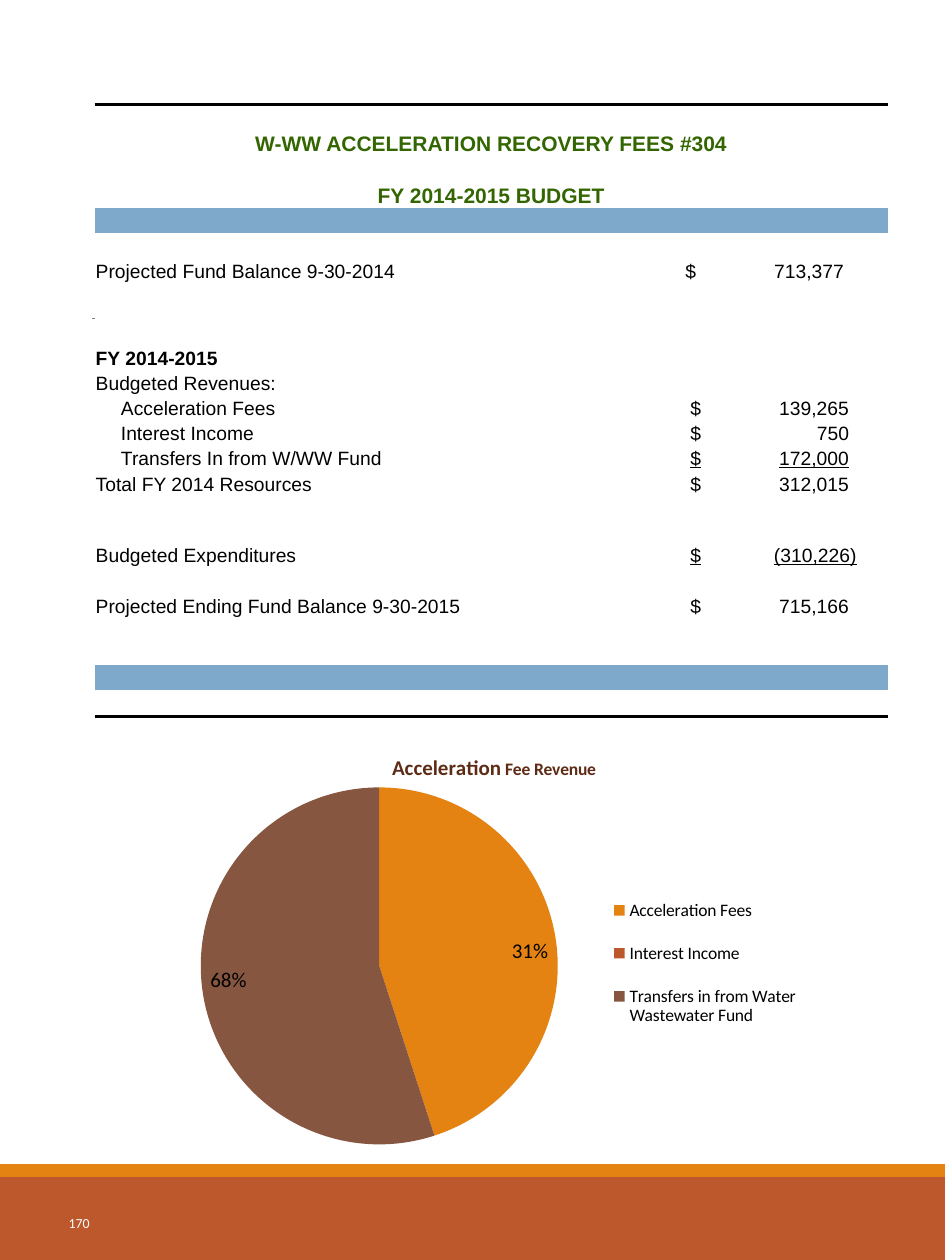
from lxml.etree import SubElement
from pptx import Presentation
from pptx.chart.data import CategoryChartData
from pptx.dml.color import RGBColor
from pptx.enum.chart import XL_CHART_TYPE, XL_LABEL_POSITION as LABEL, XL_LEGEND_POSITION
from pptx.enum.shapes import MSO_CONNECTOR, MSO_SHAPE
from pptx.enum.text import MSO_ANCHOR, PP_ALIGN
from pptx.oxml import parse_xml
from pptx.oxml.ns import nsdecls, qn
from pptx.util import Inches, Pt

COLORS = {
    "rust": "BD582C", "orange": "E48312", "brown": "865640", "chart_title": "5E2C16",
    "heading": "336600", "band": "7EA9CA", "white": "FFFFFF", "black": "000000",
    "gray": "808080",
}
COL_WIDTHS = [0.93, 0.7, 0.23, 0.93, 0.93, 0.93, 1.62]
INDENT = 0.21
AMOUNT_INDENT = 0.05

# height, label, columns spanned by the label, amount, options
ROWS = [
    (0.41, "W-WW ACCELERATION RECOVERY FEES #304", 7, "", {"heading": True}),
    (0.41, "FY 2014-2015 BUDGET", 7, "", {"heading": True}),
    (0.2, "", 1, "", {"fill": "band"}),
    (0.19, "", 1, "", {}),
    (0.2, "Projected Fund Balance 9-30-2014", 5, "713,377", {"amount_left": 0.01}),
    (0.32, "", 2, "", {}),
    (0.37, "FY 2014-2015", 2, "", {"bold": True}),
    (0.2, "Budgeted Revenues:", 3, "", {}),
    (0.2, "Acceleration Fees", 3, "139,265", {"left": INDENT}),
    (0.2, "Interest Income", 3, "750", {"left": INDENT}),
    (0.2, "Transfers In from W/WW Fund", 5, "172,000", {"left": INDENT, "underline": True}),
    (0.2, "Total FY 2014 Resources", 4, "312,015", {}),
    (0.2, "", 1, "", {}),
    (0.37, "Budgeted Expenditures", 4, "(310,226)", {"underline": True, "tab": 1.32}),
    (0.2, "", 1, "", {}),
    (0.2, "Projected Ending Fund Balance 9-30-2015", 5, "715,166", {}),
    (0.19, "", 1, "", {}),
    (0.19, "", 1, "", {}),
    (0.2, "", 1, "", {"fill": "band"}),
    (0.21, "", 1, "", {}),
]
# category, share, colour, label, label position
SLICES = [
    ("Acceleration Fees", 45, "orange", "31%", LABEL.INSIDE_END),
    ("Interest Income", 0, "rust", "1%", LABEL.OUTSIDE_END),
    ("Transfers in from Water Wastewater Fund", 55, "brown", "68%", LABEL.INSIDE_END),
]


def rgb(name):
    return RGBColor.from_string(COLORS[name])


def set_font(font, name, size, color, bold=False):
    font.name, font.size, font.bold = name, Pt(size), bold
    font.color.rgb = rgb(color)


def add_border(cell, side):
    """Rule one edge of a cell; side is lnT or lnB."""
    cell._tc.get_or_add_tcPr().insert(0, parse_xml(
        f'<a:{side} {nsdecls("a")} w="{Pt(2)}"><a:solidFill>'
        f'<a:srgbClr val="{COLORS["black"]}"/></a:solidFill></a:{side}>'))


def place(element, index, x, y, w, h, target=""):
    """Give a chart part a manual layout, in fractions of the chart."""
    for old in element.findall(qn("c:layout")):
        element.remove(old)
    sizes = "".join(f'<c:{k} val="{v}"/>' for k, v in zip("xywh", (x, y, w, h)))
    element.insert(index, parse_xml(
        f'<c:layout {nsdecls("c")}><c:manualLayout>{target}'
        f'<c:xMode val="edge"/><c:yMode val="edge"/>{sizes}'
        '</c:manualLayout></c:layout>'))


class Deck:
    def __init__(self, width, height):
        self.prs = Presentation()
        self.prs.slide_width, self.prs.slide_height = Inches(width), Inches(height)
        self.s = self.prs.slides.add_slide(self.prs.slide_layouts[6])

    def bar(self, x, y, w, h, color):
        sp = self.s.shapes.add_shape(
            MSO_SHAPE.RECTANGLE, Inches(x), Inches(y), Inches(w), Inches(h))
        sp.shadow.inherit = False
        sp.fill.solid()
        sp.fill.fore_color.rgb = rgb(color)
        sp.line.fill.background()

    def line(self, x1, y1, x2, y2, color, width):
        ln = self.s.shapes.add_connector(
            MSO_CONNECTOR.STRAIGHT, Inches(x1), Inches(y1), Inches(x2), Inches(y2))
        ln.line.color.rgb = rgb(color)
        ln.line.width = Pt(width)
        SubElement(ln._element.spPr, qn("a:effectLst"))

    def page_number(self, x, y, w, h, text):
        tf = self.s.shapes.add_textbox(Inches(x), Inches(y), Inches(w), Inches(h)).text_frame
        tf.word_wrap = True
        tf.vertical_anchor = MSO_ANCHOR.MIDDLE
        p = tf.paragraphs[0]
        p.text, p.alignment = text, PP_ALIGN.RIGHT
        set_font(p.font, "Calibri", 7.9, "white")

    def cell_text(self, cell, text, left=0.01, tab=None, heading=False,
                  bold=False, underline=False):
        cell.margin_left = Inches(left)
        p = cell.text_frame.paragraphs[0]
        p.text = text
        if tab:
            tabs = SubElement(p._p.get_or_add_pPr(), qn("a:tabLst"))
            SubElement(tabs, qn("a:tab"), pos=str(Inches(tab)), algn="r")
        if heading:
            p.alignment = PP_ALIGN.CENTER
            set_font(p.font, "Arial", 12, "heading", True)
        else:
            set_font(p.font, "Arial", 11, "black", bold)
            p.font.underline = underline

    def budget_table(self, x, y):
        last = len(COL_WIDTHS) - 1
        frame = self.s.shapes.add_table(
            len(ROWS), len(COL_WIDTHS), Inches(x), Inches(y),
            Inches(sum(COL_WIDTHS)), Inches(sum(row[0] for row in ROWS)))
        tbl = frame.table
        tbl.first_row = tbl.horz_banding = False
        no_grid = "{2D5ABB26-0587-4C30-8999-92F81FD0307C}"
        tbl._tbl.tblPr.find(qn("a:tableStyleId")).text = no_grid
        for col, width in zip(tbl.columns, COL_WIDTHS):
            col.width = Inches(width)
        for i, (height, label, span, amount, opt) in enumerate(ROWS):
            tbl.rows[i].height = Inches(height)
            cells = list(tbl.rows[i].cells)
            for cell in cells:
                cell.fill.solid()
                cell.fill.fore_color.rgb = rgb(opt.get("fill", "white"))
                cell.margin_left = cell.margin_right = cell.margin_top = Inches(0.01)
                cell.margin_bottom = 0
                cell.vertical_anchor = MSO_ANCHOR.BOTTOM
                if i == 0:
                    add_border(cell, "lnT")
                elif i == len(ROWS) - 1:
                    add_border(cell, "lnB")
            if span > 1:
                cells[0].merge(cells[span - 1])
            else:
                cells[1].merge(cells[2])
            if label:
                self.cell_text(cells[0], label, opt.get("left", 0.01),
                               heading=opt.get("heading", False), bold=opt.get("bold", False))
            if amount:
                self.cell_text(cells[last], f"$\t{amount}",
                               opt.get("amount_left", AMOUNT_INDENT), opt.get("tab", 1.26),
                               underline=opt.get("underline", False))
            for cell in cells:
                if not cell.text:
                    p = cell.text_frame.paragraphs[0]
                    SubElement(p._p, qn("a:endParaRPr"), sz="800")

    def revenue_pie(self, x, y, w, h):
        data = CategoryChartData()
        data.categories = [item[0] for item in SLICES]
        data.add_series("Series 1", [item[1] for item in SLICES])
        chart = self.s.shapes.add_chart(
            XL_CHART_TYPE.PIE, Inches(x), Inches(y), Inches(w), Inches(h), data).chart
        set_font(chart.font, "Calibri", 18, "black")
        chart.has_title = True
        p = chart.chart_title.text_frame.paragraphs[0]
        for text, size in (("Acceleration", 12), (" Fee Revenue", 10)):
            r = p.add_run()
            r.text = text
            set_font(r.font, "Calibri", size, "chart_title", True)
        chart.has_legend = True
        legend = chart.legend
        legend.position = XL_LEGEND_POSITION.RIGHT
        legend.include_in_layout = False
        set_font(legend.font, "Calibri", 10, "black")
        place(legend._element, 1, 0.68, 0.34, 0.31, 0.41)
        place(chart._chartSpace.chart.plotArea, 0, 0.034, 0.126, 0.568, 0.851,
              '<c:layoutTarget val="inner"/>')
        plot = chart.plots[0]
        plot.vary_by_categories = True
        for i, (_, _, color, text, position) in enumerate(SLICES):
            point = plot.series[0].points[i]
            point.format.fill.solid()
            point.format.fill.fore_color.rgb = rgb(color)
            label = point.data_label
            r = label.text_frame.paragraphs[0].add_run()
            r.text = text
            set_font(r.font, "Calibri", 12, "black")
            label.position = position


def main():
    deck = Deck(7.5, 10)
    deck.bar(0, 9.33, 7.5, 0.67, "rust")
    deck.bar(0, 9.24, 7.5, 0.1, "orange")
    deck.line(0.73, 2.53, 6.87, 2.53, "gray", 0.5)
    deck.budget_table(0.75, 0.83)
    deck.page_number(0, 9.44, 0.81, 0.53, "170")
    deck.revenue_pie(1.42, 5.83, 5, 3.33)
    deck.prs.save("out.pptx")


if __name__ == "__main__":
    main()
